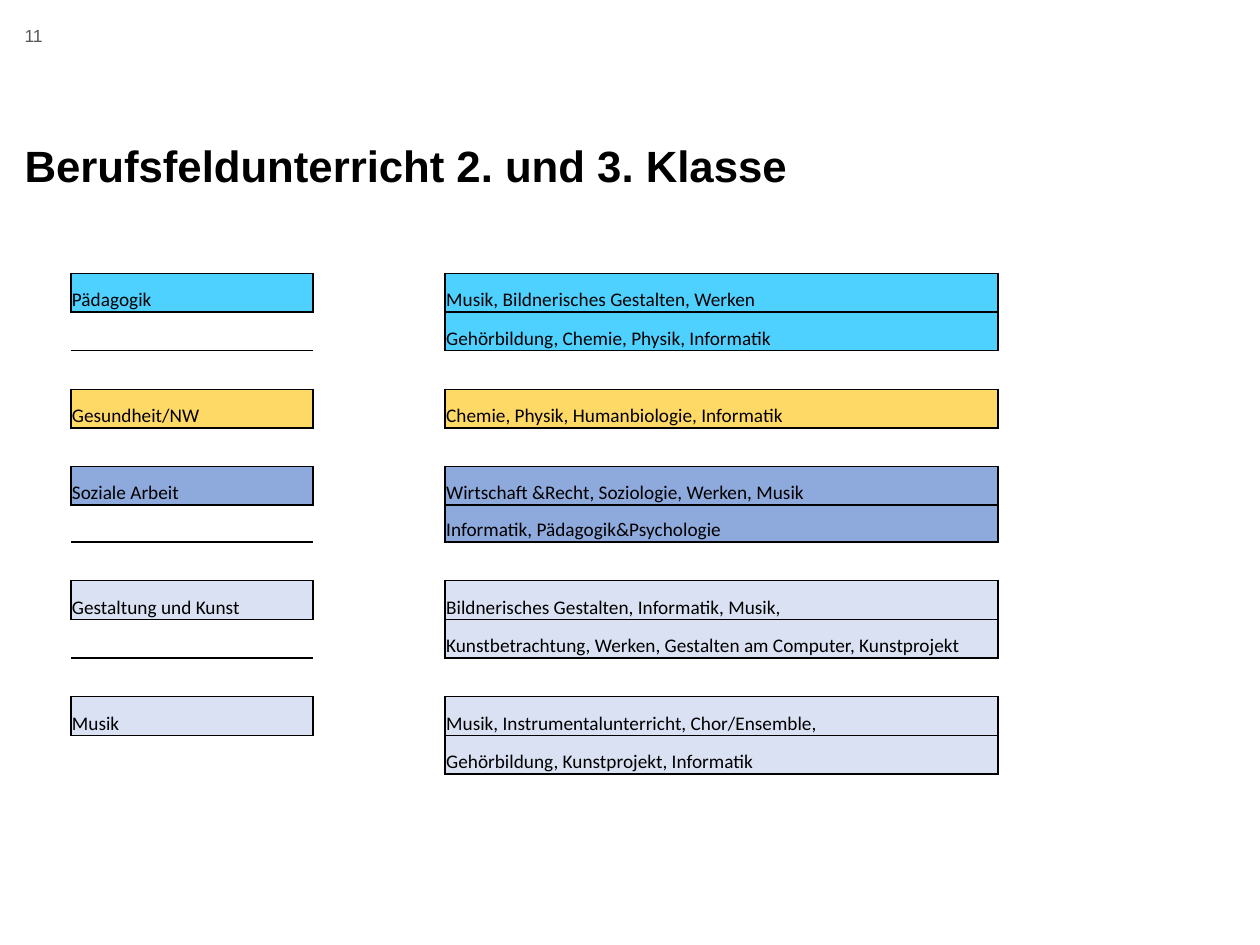
import pptx
import pptx.util
import pptx.dml.color
import pptx.enum.text
import pptx.oxml
import pptx.oxml.ns

Pt = pptx.util.Pt
ANCHOR = pptx.enum.text.MSO_ANCHOR

COLORS = {
    "black": "000000",
    "grey": "555959",
    "cyan": "4FD1FF",
    "yellow": "FFD966",
    "blue": "8EA9DB",
    "pale": "D9E1F2",
}
TITLE = "Berufsfeldunterricht 2. und 3. Klasse"
PAGE_NUMBER = "11"
FIELDS = [
    ("Pädagogik", "cyan", ["Musik, Bildnerisches Gestalten, Werken",
                           "Gehörbildung, Chemie, Physik, Informatik"]),
    ("Gesundheit/NW", "yellow", ["Chemie, Physik, Humanbiologie, Informatik"]),
    ("Soziale Arbeit", "blue", ["Wirtschaft &Recht, Soziologie, Werken, Musik",
                                "Informatik, Pädagogik&Psychologie"]),
    ("Gestaltung und Kunst", "pale",
     ["Bildnerisches Gestalten, Informatik, Musik,",
      "Kunstbetrachtung, Werken, Gestalten am Computer, Kunstprojekt"]),
    ("Musik", "pale", ["Musik, Instrumentalunterricht, Chor/Ensemble,",
                       "Gehörbildung, Kunstprojekt, Informatik"]),
]
OPEN_BELOW = "Informatik, Pädagogik&Psychologie"

TABLE_LEFT, TABLE_TOP = 40.5, 156.2
COLUMN_WIDTHS = [138.5, 75.4, 316]
ROW_HEIGHT, SHORT_ROW_HEIGHT = 22.1, 21.1
NO_STYLE = "{2D5ABB26-0587-4C30-8999-92F81FD0307C}"
# side: (row step, column step, opposite side), in the order the cell XML needs
SIDES = {"L": (0, -1, "R"), "R": (0, 1, "L"), "T": (-1, 0, "B"), "B": (1, 0, "T")}


def format_run(run, font_name, size, color, bold=False):
    run.font.name = font_name
    run.font.size = Pt(size)
    run.font.bold = bold
    run.font.color.rgb = pptx.dml.color.RGBColor.from_string(COLORS[color])


def fill_frame(frame, text, anchor, bottom=0):
    frame.margin_left = frame.margin_right = frame.margin_top = 0
    frame.margin_bottom = Pt(bottom)
    frame.word_wrap = True
    frame.auto_size = pptx.enum.text.MSO_AUTO_SIZE.NONE
    frame.vertical_anchor = anchor
    frame.text = text
    paragraph = frame.paragraphs[0]
    paragraph.alignment = pptx.enum.text.PP_ALIGN.LEFT
    return paragraph


def lay_out_rows():
    """Return the table rows as (field, subjects, color), one blank row between fields."""
    rows = []
    for field, color, subject_lines in FIELDS:
        if rows:
            rows.append(("", "", None))
        for index, subjects in enumerate(subject_lines):
            rows.append(("" if index else field, subjects, color))
    return rows


def find_borders(texts):
    """Return the bordered sides of each cell; both cells at a shared edge carry it."""
    borders = {place: set() for place in texts}
    for (row, column), text in texts.items():
        if not text:
            continue
        for side, (row_step, column_step, opposite) in SIDES.items():
            if text == OPEN_BELOW and side == "B":
                continue
            borders[row, column].add(side)
            neighbour = (row + row_step, column + column_step)
            if neighbour in borders:
                borders[neighbour].add(opposite)
    return borders


def draw_borders(cell, sides):
    properties = cell._tc.get_or_add_tcPr()
    for position, side in enumerate(s for s in SIDES if s in sides):
        properties.insert(position, pptx.oxml.parse_xml(
            f'<a:ln{side} {pptx.oxml.ns.nsdecls("a")} w="12700"><a:solidFill>'
            f'<a:srgbClr val="{COLORS["black"]}"/></a:solidFill></a:ln{side}>'))


def fill_cell(cell, text, color):
    cell.margin_left = cell.margin_right = cell.margin_top = Pt(0.6)
    cell.margin_bottom = 0
    cell.vertical_anchor = ANCHOR.BOTTOM
    paragraph = cell.text_frame.paragraphs[0]
    if text:
        paragraph.text = text
        format_run(paragraph.runs[0], "Calibri", 11, "black")
        cell.fill.solid()
        cell.fill.fore_color.rgb = pptx.dml.color.RGBColor.from_string(COLORS[color])
    else:
        # keeps the blank cell from stretching its row
        paragraph._p.append(pptx.oxml.parse_xml(
            f'<a:endParaRPr {pptx.oxml.ns.nsdecls("a")} sz="1100"/>'))
        cell.fill.background()


def add_field_table(slide):
    rows = lay_out_rows()
    heights = [SHORT_ROW_HEIGHT if row[1] == OPEN_BELOW else ROW_HEIGHT for row in rows]
    table = slide.shapes.add_table(
        len(rows), len(COLUMN_WIDTHS), Pt(TABLE_LEFT), Pt(TABLE_TOP),
        Pt(sum(COLUMN_WIDTHS)), Pt(sum(heights))).table
    table.first_row = table.horz_banding = False
    table._tbl.tblPr.find(pptx.oxml.ns.qn("a:tableStyleId")).text = NO_STYLE
    for column, width in zip(table.columns, COLUMN_WIDTHS):
        column.width = Pt(width)
    for row, height in zip(table.rows, heights):
        row.height = Pt(height)

    texts = {(r, c): text for r, (field, subjects, _) in enumerate(rows)
             for c, text in enumerate((field, "", subjects))}
    borders = find_borders(texts)
    for (r, c), text in texts.items():
        cell = table.cell(r, c)
        fill_cell(cell, text, rows[r][2])
        draw_borders(cell, borders[r, c])


def main():
    presentation = pptx.Presentation()
    presentation.slide_width, presentation.slide_height = Pt(720), Pt(540)
    slide = presentation.slides.add_slide(presentation.slide_layouts[5])

    title = slide.shapes.title
    title.left, title.top, title.width, title.height = Pt(14), Pt(80.6), Pt(692), Pt(54)
    heading = fill_frame(title.text_frame, TITLE, ANCHOR.BOTTOM, bottom=25)
    heading.line_spacing = Pt(25)
    format_run(heading.runs[0], "Arial", 25, "black", bold=True)

    page_box = slide.shapes.add_textbox(Pt(14), Pt(14.4), Pt(32), Pt(29))
    page = fill_frame(page_box.text_frame, PAGE_NUMBER, ANCHOR.TOP)
    page.space_after = Pt(6)
    format_run(page.runs[0], "Arial", 10, "grey")

    add_field_table(slide)
    presentation.save("out.pptx")


if __name__ == "__main__":
    main()
